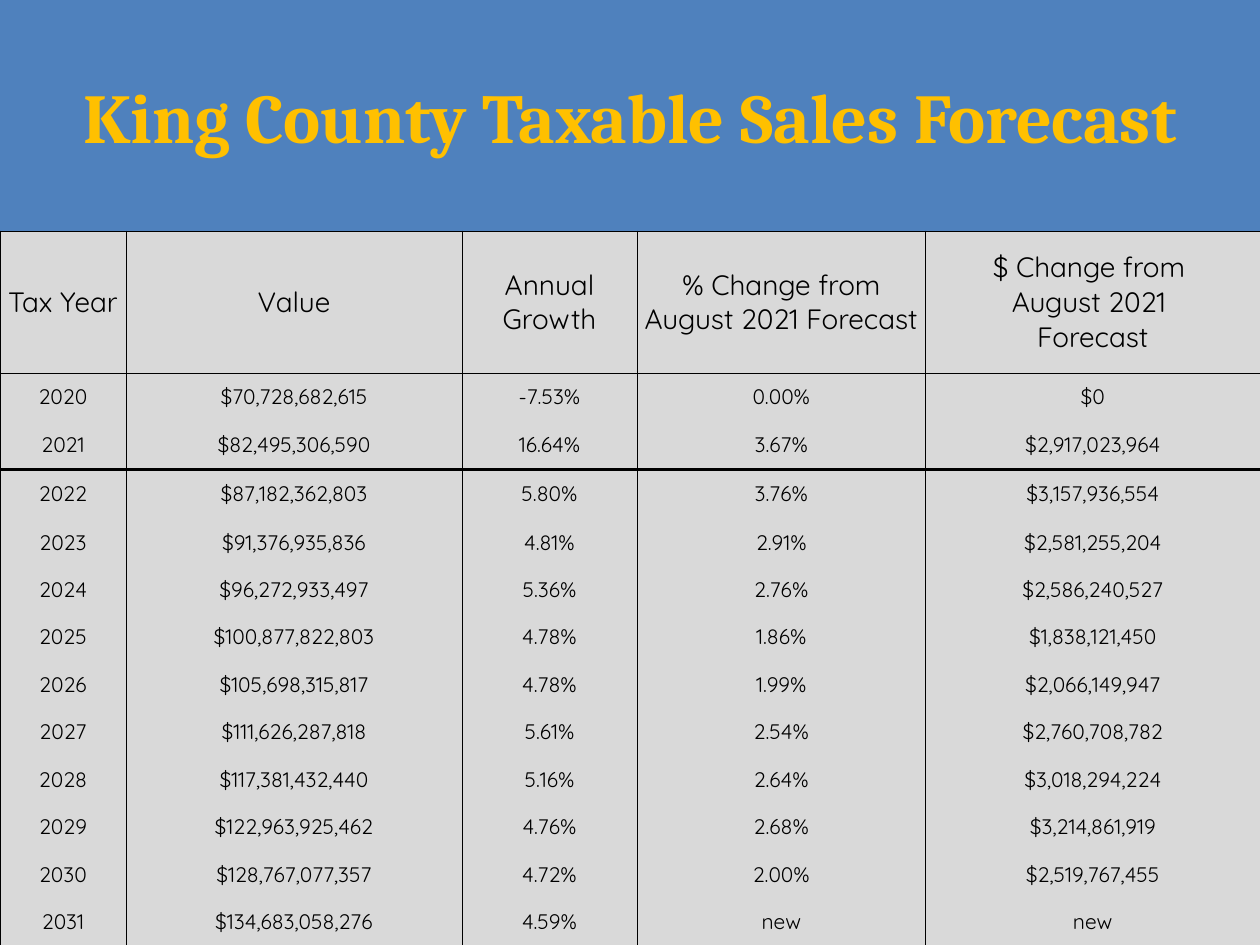
import pptx
import pptx.dml.color
import pptx.enum.text
import pptx.oxml.ns
import pptx.util
from lxml import etree

Pt = pptx.util.Pt

# Content
TITLE = "King County Taxable Sales Forecast"
HEADERS = [
    "Tax Year", "Value", "Annual Growth", "% Change from August 2021 Forecast",
    "$ Change from \nAugust 2021 \nForecast",
]
FORECAST = [
    ("2020", "$70,728,682,615", "-7.53%", "0.00%", "$0"),
    ("2021", "$82,495,306,590", "16.64%", "3.67%", "$2,917,023,964"),
    ("2022", "$87,182,362,803", "5.80%", "3.76%", "$3,157,936,554"),
    ("2023", "$91,376,935,836", "4.81%", "2.91%", "$2,581,255,204"),
    ("2024", "$96,272,933,497", "5.36%", "2.76%", "$2,586,240,527"),
    ("2025", "$100,877,822,803", "4.78%", "1.86%", "$1,838,121,450"),
    ("2026", "$105,698,315,817", "4.78%", "1.99%", "$2,066,149,947"),
    ("2027", "$111,626,287,818", "5.61%", "2.54%", "$2,760,708,782"),
    ("2028", "$117,381,432,440", "5.16%", "2.64%", "$3,018,294,224"),
    ("2029", "$122,963,925,462", "4.76%", "2.68%", "$3,214,861,919"),
    ("2030", "$128,767,077,357", "4.72%", "2.00%", "$2,519,767,455"),
    ("2031", "$134,683,058,276", "4.59%", "new", "new"),
]

# Layout in points
WIDTH, HEIGHT, BAND = 720, 540, 132
COLUMNS = [72, 192, 100, 165, 191]
ROWS = [81.2, 27.1, 28, 28] + [27.1] * 9
THIN, THICK = 0.5, 2
# Weight of each horizontal rule, by the number of rows above it
RULES = {0: THIN, 1: THIN, 3: THICK, len(ROWS): THIN}


def color(value):
    return pptx.dml.color.RGBColor.from_string(value)


def paint(thing, value):
    thing.fill.solid()
    thing.fill.fore_color.rgb = color(value)


def write(frame, text, *, size, font, ink="000000", bold=False):
    """Fill a text frame with one centred paragraph."""
    para = frame.paragraphs[0]
    para.text = text.replace("\n", "\v")
    para.alignment = pptx.enum.text.PP_ALIGN.CENTER
    for span in para.runs:
        span.font.size = Pt(size)
        span.font.name = font
        span.font.bold = bold
        span.font.color.rgb = color(ink)
    return para


def line_element(tag, weight, ink="000000"):
    """Make a DrawingML line; a weight of 0 means no line."""
    qn = pptx.oxml.ns.qn
    line = etree.Element(qn(tag), w=str(int(Pt(weight))))
    if weight:
        fill = etree.SubElement(line, qn("a:solidFill"))
        etree.SubElement(fill, qn("a:srgbClr"), val=ink)
    else:
        etree.SubElement(line, qn("a:noFill"))
    return line


def add_title(page):
    box = page.shapes.title
    box.left, box.top, box.width, box.height = Pt(0), Pt(0), Pt(WIDTH), Pt(BAND)
    paint(box, "4F81BD")
    box.text_frame.vertical_anchor = pptx.enum.text.MSO_ANCHOR.MIDDLE
    para = write(box.text_frame, TITLE, size=40, font="Cambria", ink="FFC000", bold=True)
    for span in para.runs:
        span.font._element.insert(0, line_element("a:ln", 0.75))


def format_cell(cell, row):
    borders = {
        "a:lnL": THIN, "a:lnR": THIN,
        "a:lnT": RULES.get(row, 0), "a:lnB": RULES.get(row + 1, 0),
    }
    properties = cell._tc.get_or_add_tcPr()
    for tag, weight in borders.items():
        properties.append(line_element(tag, weight))
    paint(cell, "D9D9D9")
    cell.vertical_anchor = pptx.enum.text.MSO_ANCHOR.MIDDLE
    cell.margin_left = cell.margin_right = cell.margin_top = cell.margin_bottom = Pt(0)


def add_forecast(page):
    table = page.shapes.add_table(
        len(ROWS), len(COLUMNS), Pt(0), Pt(BAND), Pt(WIDTH), Pt(sum(ROWS))
    ).table
    table.horz_banding = False
    table.first_row = False
    for column, width in zip(table.columns, COLUMNS):
        column.width = Pt(width)
    for row, (height, values) in enumerate(zip(ROWS, [HEADERS] + FORECAST)):
        table.rows[row].height = Pt(height)
        for column, text in enumerate(values):
            cell = table.cell(row, column)
            format_cell(cell, row)
            write(cell.text_frame, text, size=12 if row else 16, font="Quicksand")


def main():
    deck = pptx.Presentation()
    deck.slide_width, deck.slide_height = Pt(WIDTH), Pt(HEIGHT)
    page = deck.slides.add_slide(deck.slide_layouts.get_by_name("Title Only"))
    add_title(page)
    add_forecast(page)
    deck.save("out.pptx")


if __name__ == "__main__":
    main()
